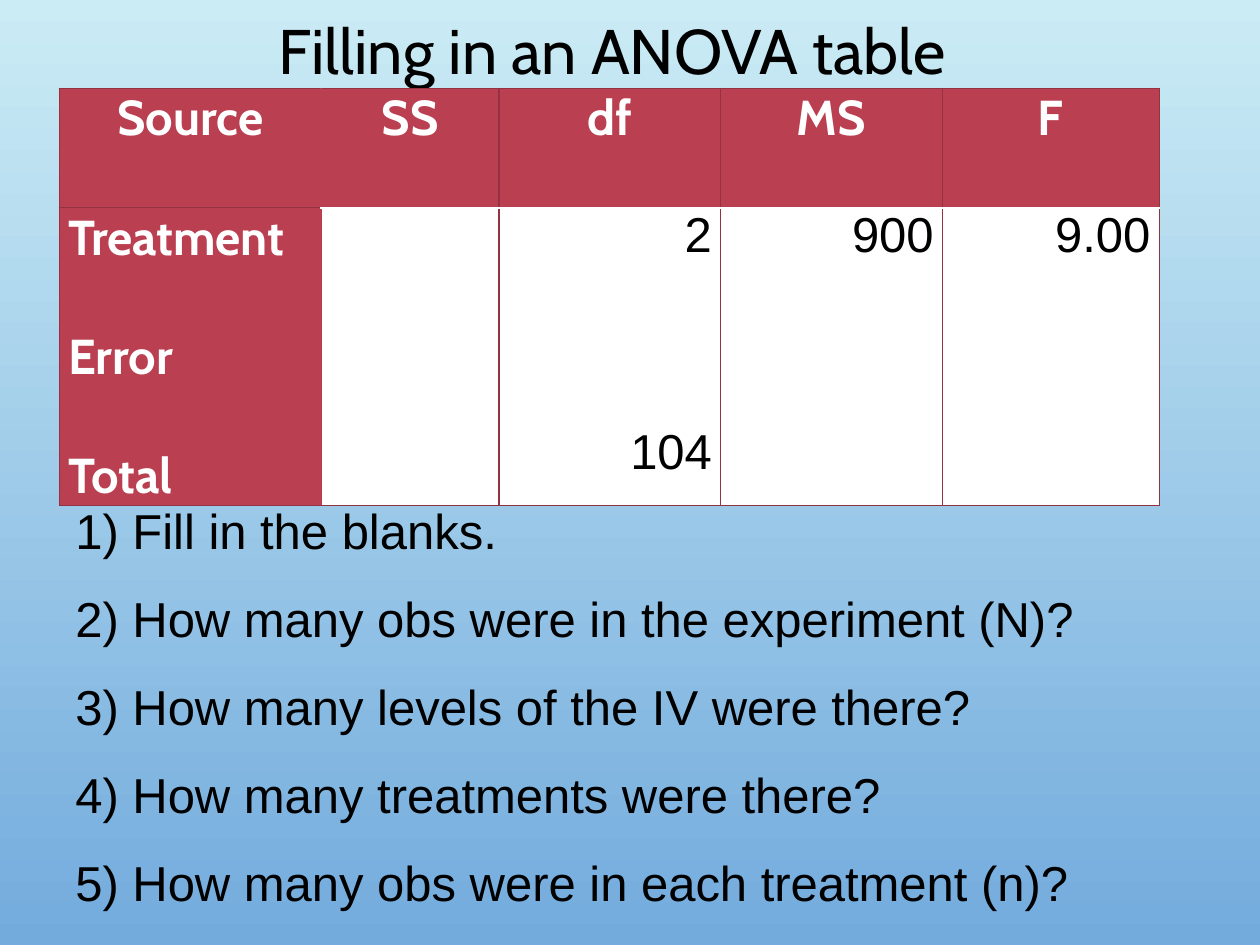
from dataclasses import dataclass

from lxml import etree
from pptx import Presentation
from pptx.dml.color import RGBColor
from pptx.enum.text import MSO_ANCHOR, PP_ALIGN
from pptx.oxml.ns import qn
from pptx.util import Inches, Pt

LEFT, CENTER, RIGHT = PP_ALIGN.LEFT, PP_ALIGN.CENTER, PP_ALIGN.RIGHT
MIDDLE = MSO_ANCHOR.MIDDLE


@dataclass(frozen=True)
class Theme:
    sky_top: str = "CBECF5"
    sky_bottom: str = "73ABDD"
    red: str = "BA3F51"
    border: str = "953241"
    white: str = "FFFFFF"
    black: str = "000000"
    heading_font: str = "Cabin"
    body_font: str = "Arial"
    title_size: int = 36
    body_size: int = 28


THEME = Theme()

COLUMN_WIDTHS = (2.08, 1.41, 1.76, 1.76, 1.72)
ROW_HEIGHTS = (0.95, 2.36)
HEADERS = ("Source", "SS", "df", "MS", "F")
LABELS = ("Treatment", "Error", "Total")
VALUES = ((), ("2", "104"), ("900",), ("9.00",))
LABEL_GAP = 34
VALUE_GAP = 93

QUESTIONS = (
    "1) Fill in the blanks.",
    "2) How many obs were in the experiment (N)?",
    "3) How many levels of the IV were there?",
    "4) How many treatments were there?",
    "5) How many obs were in each treatment (n)?",
)


def write_lines(frame, lines, font, size, color, align=LEFT, bold=False,
                line_spacing=None, gap=0):
    """Write one paragraph per line, with gap points between paragraphs."""
    frame.text = "\n".join(lines)
    for index, para in enumerate(frame.paragraphs):
        para.alignment = align
        para.line_spacing = line_spacing
        para.space_before = Pt(gap if index else 0)
        para.font.size = Pt(size)
        for span in para.runs:
            span.font.name = font
            span.font.size = Pt(size)
            span.font.bold = bold
            span.font.color.rgb = RGBColor.from_string(color)


def set_borders(cell, **overrides):
    """Draw all four borders; overrides map a side (L, R, T, B) to color and width."""
    properties = cell._tc.get_or_add_tcPr()
    for index, side in enumerate("LRTB"):
        color, width = overrides.get(side, (THEME.border, 0.75))
        line = etree.Element(qn(f"a:ln{side}"), w=str(Pt(width)))
        fill = etree.SubElement(line, qn("a:solidFill"))
        etree.SubElement(fill, qn("a:srgbClr"), val=color)
        properties.insert(index, line)


def fill_cell(cell, lines, fill, **text_style):
    cell.margin_left = cell.margin_right = Inches(0.07)
    cell.margin_top = cell.margin_bottom = 0
    cell.fill.solid()
    cell.fill.fore_color.rgb = RGBColor.from_string(fill)
    write_lines(cell.text_frame, lines, size=THEME.body_size, **text_style)


def add_background(page):
    fill = page.background.fill
    fill.gradient()
    fill.gradient_angle = 270
    for stop, color, position in zip(
            fill.gradient_stops, (THEME.sky_top, THEME.sky_bottom), (0, 1)):
        stop.color.rgb = RGBColor.from_string(color)
        stop.position = position


def add_title(page, left, top, width, height):
    frame = page.shapes.add_textbox(left, top, width, height).text_frame
    frame.word_wrap = True
    frame.vertical_anchor = MIDDLE
    write_lines(frame, ["Filling in an ANOVA table"], THEME.heading_font,
                THEME.title_size, THEME.black, align=CENTER, line_spacing=0.9)


def add_anova_table(page, left, top, width, height):
    table = page.shapes.add_table(len(ROW_HEIGHTS), len(COLUMN_WIDTHS),
                                  left, top, width, height).table
    table.horz_banding = False
    for column, share in zip(table.columns, COLUMN_WIDTHS):
        column.width = int(width * share / sum(COLUMN_WIDTHS))
    for row, share in zip(table.rows, ROW_HEIGHTS):
        row.height = int(height * share / sum(ROW_HEIGHTS))

    heading = {"font": THEME.heading_font, "color": THEME.white, "bold": True}
    white_rule, red_rule = (THEME.white, 1.25), (THEME.red, 1.25)

    for column, header in enumerate(HEADERS):
        cell = table.cell(0, column)
        fill_cell(cell, [header], THEME.red, align=CENTER, **heading)
        if column == 0:
            set_borders(cell, R=red_rule)
        elif column == 1:
            set_borders(cell, L=red_rule, B=white_rule)
        else:
            set_borders(cell, B=white_rule)

    label_cell = table.cell(1, 0)
    fill_cell(label_cell, LABELS, THEME.red, gap=LABEL_GAP, **heading)
    set_borders(label_cell, R=red_rule)

    for column, values in enumerate(VALUES, start=1):
        cell = table.cell(1, column)
        fill_cell(cell, values, THEME.white, font=THEME.body_font,
                  color=THEME.black, align=RIGHT, gap=VALUE_GAP)
        if column == 1:
            set_borders(cell, L=red_rule, T=white_rule)
        else:
            set_borders(cell, T=white_rule)


def add_questions(page, left, top, width, height):
    frame = page.shapes.add_textbox(left, top, width, height).text_frame
    frame.word_wrap = True
    write_lines(frame, QUESTIONS, THEME.body_font, THEME.body_size,
                THEME.black, line_spacing=1.2, gap=10)


def main():
    deck = Presentation()
    deck.slide_width, deck.slide_height = Inches(10), Inches(7.5)
    page = deck.slides.add_slide(deck.slide_layouts[6])
    add_background(page)
    add_title(page, Inches(0.36), Inches(0.04), Inches(9), Inches(0.78))
    add_questions(page, Inches(0.5), Inches(3.83), Inches(9), Inches(3))
    add_anova_table(page, Inches(0.47), Inches(0.7),
                    Inches(sum(COLUMN_WIDTHS)), Inches(sum(ROW_HEIGHTS)))
    deck.save("out.pptx")


if __name__ == "__main__":
    main()
